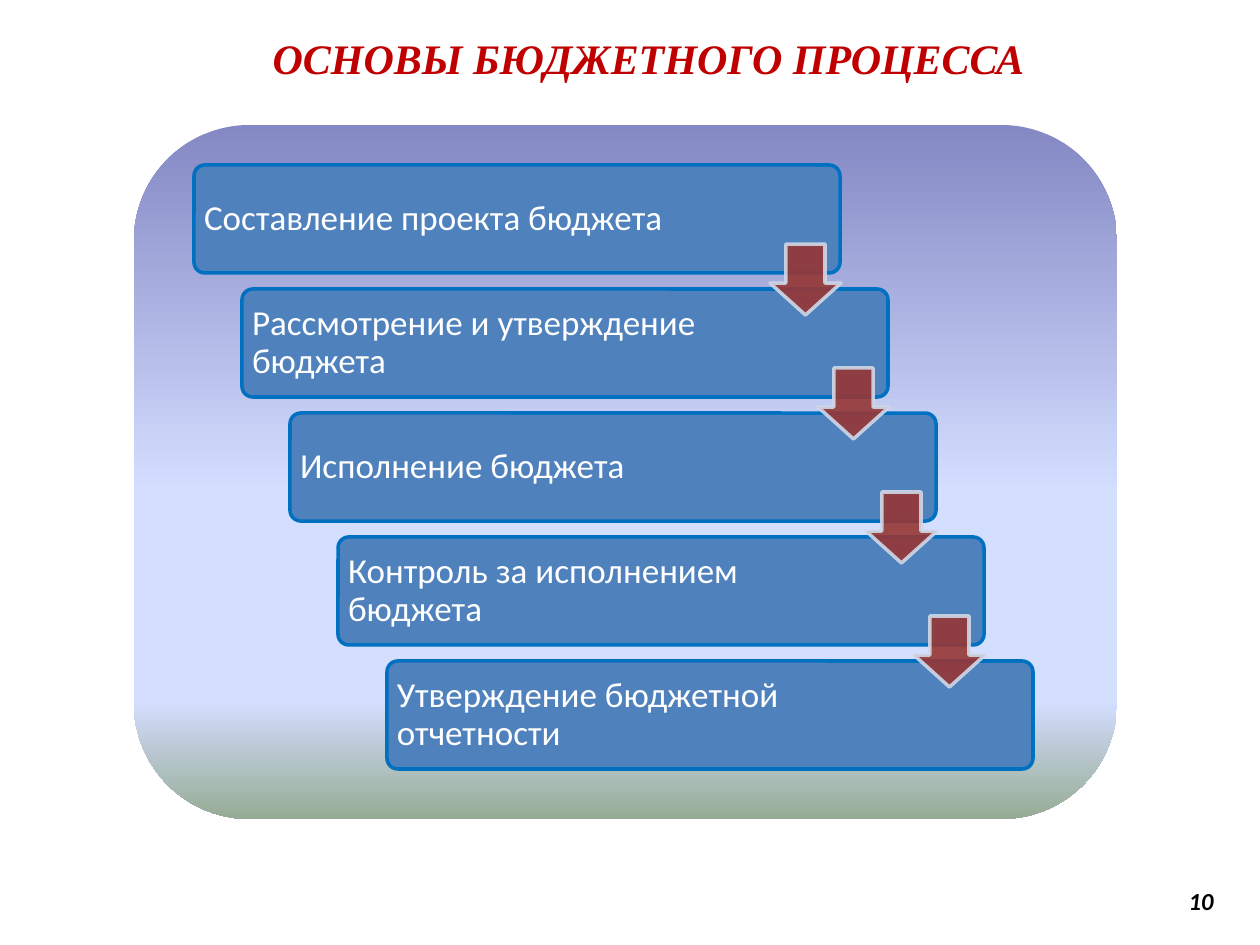
from lxml import etree
from pptx import Presentation
from pptx import util as u
from pptx.dml.color import RGBColor
from pptx.enum import shapes, text
from pptx.oxml.ns import qn

SCALE = 914400 / 126
STEPS = [
    "Составление проекта бюджета",
    "Рассмотрение и утверждение бюджета",
    "Исполнение бюджета",
    "Контроль за исполнением бюджета",
    "Утверждение бюджетной отчетности",
]
PANEL_STOPS = [(0, "8488C4"), (53, "D4DEFF"), (83, "D4DEFF"), (100, "96AB94")]
TITLE = {"name": "Times New Roman", "size": u.Pt(24), "bold": True, "italic": True}
NUMBER = {"name": "Calibri", "size": u.Pt(14), "bold": True, "italic": True}
STEP = {"name": "Calibri", "size": u.Pt(20)}
MIDDLE = {"vertical_anchor": text.MSO_ANCHOR.MIDDLE}
STEP_FRAME = MIDDLE | {
    f"margin_{side}": u.Inches(0.08) for side in ("left", "top", "right", "bottom")
}


def px(length):
    return u.Emu(round(length * SCALE))


def color(code):
    return RGBColor.from_string(code)


def apply(target, values):
    for name, value in values.items():
        setattr(target, name, value)


class SlideBuilder:
    def __init__(self, page):
        self.page = page

    def shape(self, kind, area, fill=None, line=None, adjustments=(), opacity=100):
        shape = self.page.shapes.add_shape(kind, *map(px, area))
        shape.shadow.inherit = False
        for index, value in enumerate(adjustments):
            shape.adjustments[index] = value
        if fill:
            shape.fill.solid()
            shape.fill.fore_color.rgb = color(fill)
        if line:
            shape.line.color.rgb = color(line)
            shape.line.width = u.Pt(2)
        else:
            shape.line.fill.background()
        if opacity < 100:
            for code in shape._element.spPr.iter(qn("a:srgbClr")):
                etree.SubElement(code, qn("a:alpha"), val=str(opacity * 1000))
        return shape

    def panel(self, area, stops):
        shape = self.shape(shapes.MSO_SHAPE.ROUNDED_RECTANGLE, area)
        shape.fill.gradient()
        shape.fill.gradient_angle = 270
        stop_list = shape._element.spPr.find(".//" + qn("a:gsLst"))
        stop_list.clear()
        for position, code in stops:
            stop = etree.SubElement(stop_list, qn("a:gs"), pos=str(position * 1000))
            etree.SubElement(stop, qn("a:srgbClr"), val=code)

    def text(self, area, words, font, code, frame=None, para_format=None):
        box = self.page.shapes.add_textbox(*map(px, area))
        box.text_frame.word_wrap = True
        apply(box.text_frame, frame or {})
        para = box.text_frame.paragraphs[0]
        apply(para, para_format or {})
        span = para.add_run()
        span.text = words
        apply(span.font, font)
        span.font.color.rgb = color(code)
        return para

    def step(self, left, top, words):
        self.shape(shapes.MSO_SHAPE.ROUNDED_RECTANGLE, (left, top, 646, 108),
                   "4F81BD", "0070C0", [0.1])
        self.text((left, top, 528, 108), words, STEP, "FFFFFF",
                  STEP_FRAME, {"line_spacing": 0.9})

    def arrow(self, left, top):
        self.shape(shapes.MSO_SHAPE.DOWN_ARROW, (left, top, 71, 71),
                   "953735", "D0D8E8", [0.55, 0.45], 90)


def main():
    deck = Presentation()
    deck.slide_width, deck.slide_height = px(1260), px(945)
    builder = SlideBuilder(deck.slides.add_slide(deck.slide_layouts[6]))

    builder.text((903, 876, 323, 50), "10", NUMBER, "000000", MIDDLE,
                 {"alignment": text.PP_ALIGN.RIGHT})
    builder.panel((134, 125, 983, 694), PANEL_STOPS)
    title = builder.text((84, 26, 1081, 63), "ОСНОВЫ БЮДЖЕТНОГО ПРОЦЕССА", TITLE, "C00000",
                         {"auto_size": text.MSO_AUTO_SIZE.SHAPE_TO_FIT_TEXT},
                         {"alignment": text.PP_ALIGN.CENTER})
    title._p.get_or_add_pPr().set("indent", str(px(48)))

    corners = [(194 + 193 * i // 4, 165 + 124 * i) for i in range(len(STEPS))]
    for (left, top), words in zip(corners, STEPS):
        builder.step(left, top, words)
    for left, top in corners[:-1]:
        builder.arrow(left + 576, top + 79)

    deck.save("out.pptx")


if __name__ == "__main__":
    main()
